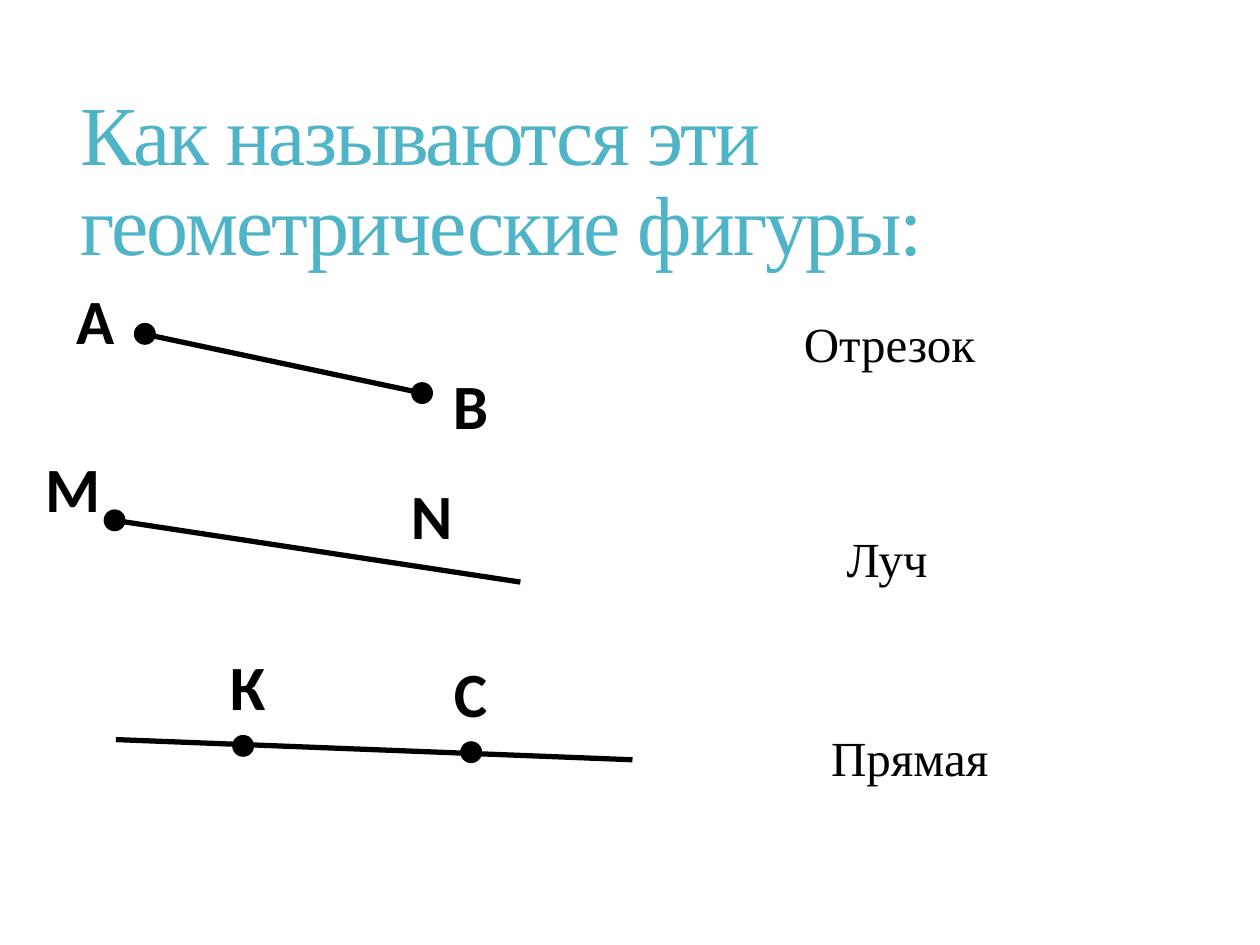
import pptx
import pptx.util
import pptx.dml.color
import pptx.enum.shapes
import pptx.enum.text
import pptx.oxml.ns
import lxml.etree

TITLE = "Как называются эти геометрические фигуры:"
TITLE_BOX = (0.54, 0.55, 8.84, 1.81)
FIGURES = [
    {"name": "Отрезок", "name_at": (5.02, 2.25),
     "line": ((1.14, 2.65), (3.35, 3.12)),
     "dots": [(1.15, 2.65), (3.35, 3.12)],
     "letters": [("А", 0.48, 2.18, 0.71), ("В", 3.46, 2.85, 0.71)]},
    {"name": "Луч", "name_at": (5.0, 3.95),
     "line": ((0.91, 4.13), (4.13, 4.62)),
     "dots": [(0.91, 4.13)],
     "letters": [("М", 0.26, 3.51, 0.71), ("N", 3.15, 3.78, 0.6)]},
    {"name": "Прямая", "name_at": (5.18, 5.53),
     "line": ((0.92, 5.87), (5.02, 6.03)),
     "dots": [(1.93, 5.92), (3.74, 5.97)],
     "letters": [("К", 1.69, 5.08, 0.71), ("С", 3.46, 5.14, 0.71)]},
]
NAME_SIZE = (4.08, 0.95)
LETTER_WIDTH = 0.55
DOT = 0.16
THEME = {
    "ink": "000000", "paper": "FFFFFF", "title": "50B4C8",
    "serif": "Times New Roman", "sans": "Calibri",
    "title_pt": 48, "letter_pt": 36, "name_pt": 28,
    "line_pt": 3, "edge_pt": 1,
}

Inches, Pt = pptx.util.Inches, pptx.util.Pt
SHAPE = pptx.enum.shapes.MSO_SHAPE
ALIGN = pptx.enum.text.PP_ALIGN


def color(key):
    return pptx.dml.color.RGBColor.from_string(THEME[key])


def inches(values):
    return [Inches(value) for value in values]


def write(box, text, font, size, ink, align, bold=False):
    frame = box.text_frame
    frame.word_wrap = True
    frame.vertical_anchor = pptx.enum.text.MSO_ANCHOR.MIDDLE
    para = frame.paragraphs[0]
    para.alignment = align
    span = para.add_run()
    span.text = text
    span.font.name = THEME[font]
    span.font.size = Pt(THEME[size])
    span.font.bold = bold
    span.font.color.rgb = color(ink)
    return para, span


def add_filled(page, kind, area, fill):
    shape = page.shapes.add_shape(kind, *inches(area))
    shape.shadow.inherit = False
    shape.fill.solid()
    shape.fill.fore_color.rgb = color(fill)
    shape.line.color.rgb = color(fill)
    shape.line.width = Pt(THEME["edge_pt"])
    return shape


def add_line(page, start, end):
    line = page.shapes.add_connector(
        pptx.enum.shapes.MSO_CONNECTOR.STRAIGHT, *inches(start + end))
    line.line.color.rgb = color("ink")
    line.line.width = Pt(THEME["line_pt"])
    lxml.etree.SubElement(line._element.spPr, pptx.oxml.ns.qn("a:effectLst"))


def add_label(page, area, text, font, size, bold):
    box = add_filled(page, SHAPE.RECTANGLE, area, "paper")
    write(box, text, font, size, "ink", ALIGN.CENTER, bold)


deck = pptx.Presentation()
deck.slide_width, deck.slide_height = inches((10, 7.5))
page = deck.slides.add_slide(deck.slide_layouts[6])

title = page.shapes.add_textbox(*inches(TITLE_BOX))
para, span = write(title, TITLE, "serif", "title_pt", "title", ALIGN.LEFT)
para.line_spacing = 0.9
span.font._element.set("spc", "-120")

for figure in FIGURES:
    add_line(page, *figure["line"])
    for x, y in figure["dots"]:
        add_filled(page, SHAPE.OVAL, (x - DOT / 2, y - DOT / 2, DOT, DOT), "ink")

for figure in FIGURES:
    for letter, left, top, height in figure["letters"]:
        add_label(page, (left, top, LETTER_WIDTH, height), letter,
                  "sans", "letter_pt", True)
    add_label(page, figure["name_at"] + NAME_SIZE, figure["name"],
              "serif", "name_pt", False)

deck.save("out.pptx")
